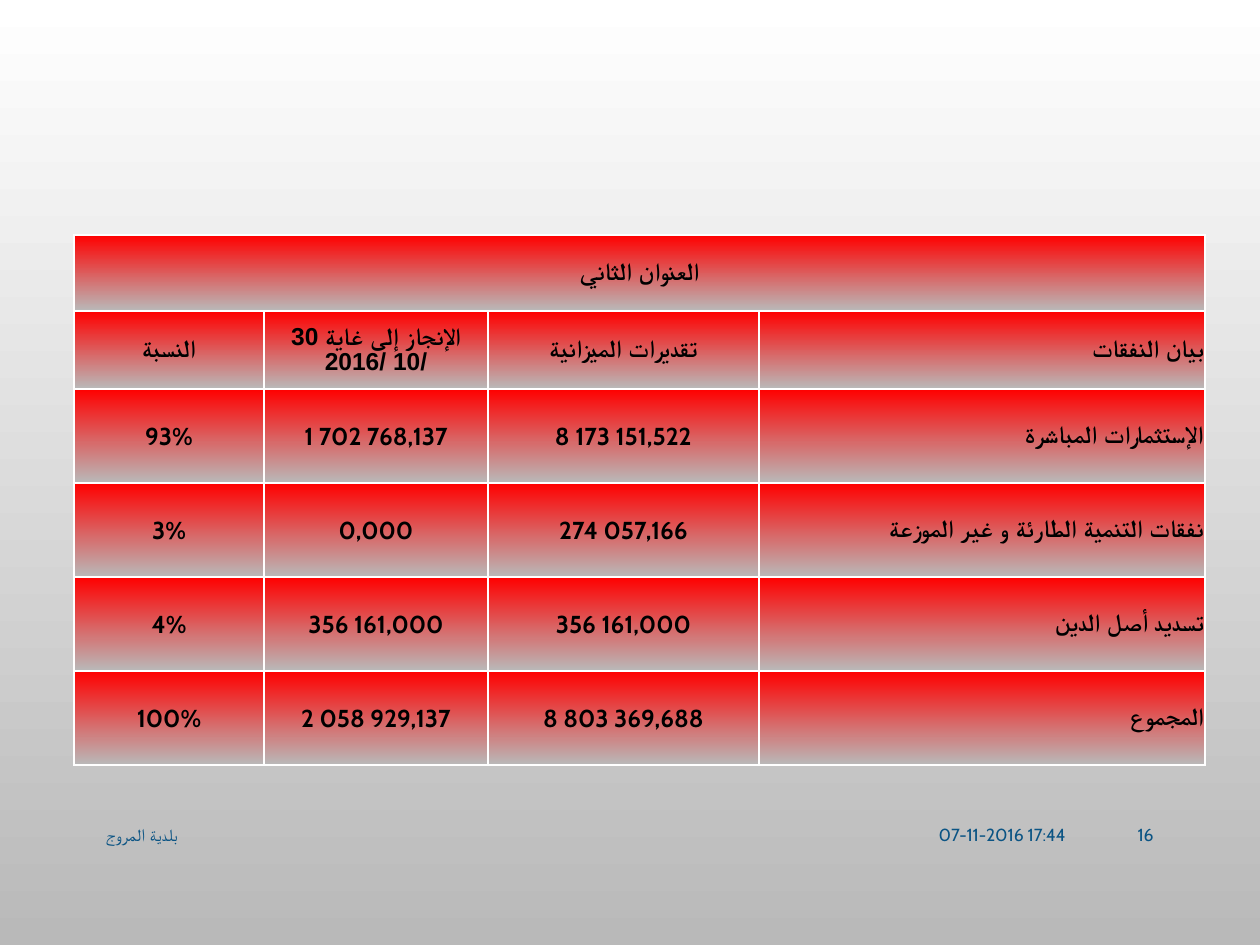
"""Build the budget slide: second-title expenditure table with footer."""
from lxml.etree import SubElement
from pptx import Presentation
from pptx.dml.color import RGBColor
from pptx.enum.text import MSO_ANCHOR, PP_ALIGN
from pptx.oxml.ns import qn
from pptx.util import Pt

PX = 914400 // 126
FONT = "Cabin"
ARABIC_FONT = "Arial"
COLORS = {"white": "FFFFFF", "gray": "B9B9B9", "red": "FF0000",
          "text": "000000", "footer": "0B5484"}


def shade(fill, top_color):
    fill.gradient()
    fill.gradient_angle = 270
    for stop, name in zip(fill.gradient_stops, (top_color, "gray")):
        stop.color.rgb = RGBColor.from_string(COLORS[name])


def write(frame, text, size, color, align, bold=False):
    paragraph = frame.paragraphs[0]
    paragraph.alignment = align
    run = paragraph.add_run()
    run.text = text
    run.font.size = Pt(size)
    run.font.bold = bold
    run.font.name = FONT
    run.font.color.rgb = RGBColor.from_string(COLORS[color])
    SubElement(run._r.get_or_add_rPr(), qn("a:cs"), typeface=ARABIC_FONT)
    return paragraph


presentation = Presentation()
presentation.slide_width = 1260 * PX
presentation.slide_height = 945 * PX
slide = presentation.slides.add_slide(presentation.slide_layouts[6])
shade(slide.background.fill, "white")

footer_items = [
    (794, 284, "07-11-2016 17:44", PP_ALIGN.RIGHT),
    (94, 690, "بلدية المروج", PP_ALIGN.LEFT),
    (1086, 80, "16", PP_ALIGN.RIGHT),
]
for left, width, text, align in footer_items:
    footer = slide.shapes.add_textbox(left * PX, 810 * PX, width * PX, 50 * PX).text_frame
    footer.word_wrap = True
    footer.vertical_anchor = MSO_ANCHOR.MIDDLE
    write(footer, text, 10, "footer", align)

budget_rows = [
    ("العنوان الثاني", "", "", ""),
    ("النسبة", "الإنجاز إلى غاية 30 /10 /2016", "تقديرات الميزانية", "بيان النفقات"),
    ("93%", "1 702 768,137", "8 173 151,522", "الإستثمارات المباشرة"),
    ("3%", "0,000", "274 057,166", "نفقات التنمية الطارئة و غير الموزعة"),
    ("4%", "356 161,000", "356 161,000", "تسديد أصل الدين"),
    ("100%", "2 058 929,137", "8 803 369,688", "المجموع"),
]
column_widths = [190, 224, 271, 446]
row_heights = [76, 78] + [94] * 4
budget = slide.shapes.add_table(
    len(row_heights), len(column_widths), 74 * PX, 235 * PX,
    sum(column_widths) * PX, sum(row_heights) * PX).table
for column, width in zip(budget.columns, column_widths):
    column.width = width * PX
for row, height in zip(budget.rows, row_heights):
    row.height = height * PX
budget.cell(0, 0).merge(budget.cell(0, 3))

for row_index, entries in enumerate(budget_rows):
    for column_index, text in enumerate(entries):
        cell = budget.cell(row_index, column_index)
        cell.margin_left = cell.margin_right = cell.margin_top = PX
        cell.margin_bottom = 0
        cell.vertical_anchor = MSO_ANCHOR.MIDDLE
        if text:
            align = PP_ALIGN.RIGHT if column_index == 3 else PP_ALIGN.CENTER
            paragraph = write(cell.text_frame, text, 14, "text", align, bold=True)
            if row_index < 2 or column_index == 3:
                paragraph.line_spacing = 0.9
                paragraph._p.get_or_add_pPr().set("rtl", "1")
        properties = cell._tc.get_or_add_tcPr()
        for side in ("a:lnL", "a:lnR", "a:lnT", "a:lnB"):
            border = SubElement(properties, qn(side), w=str(Pt(1)))
            SubElement(SubElement(border, qn("a:solidFill")), qn("a:srgbClr"),
                       val=COLORS["white"])
        shade(cell.fill, "red")

presentation.save("out.pptx")
